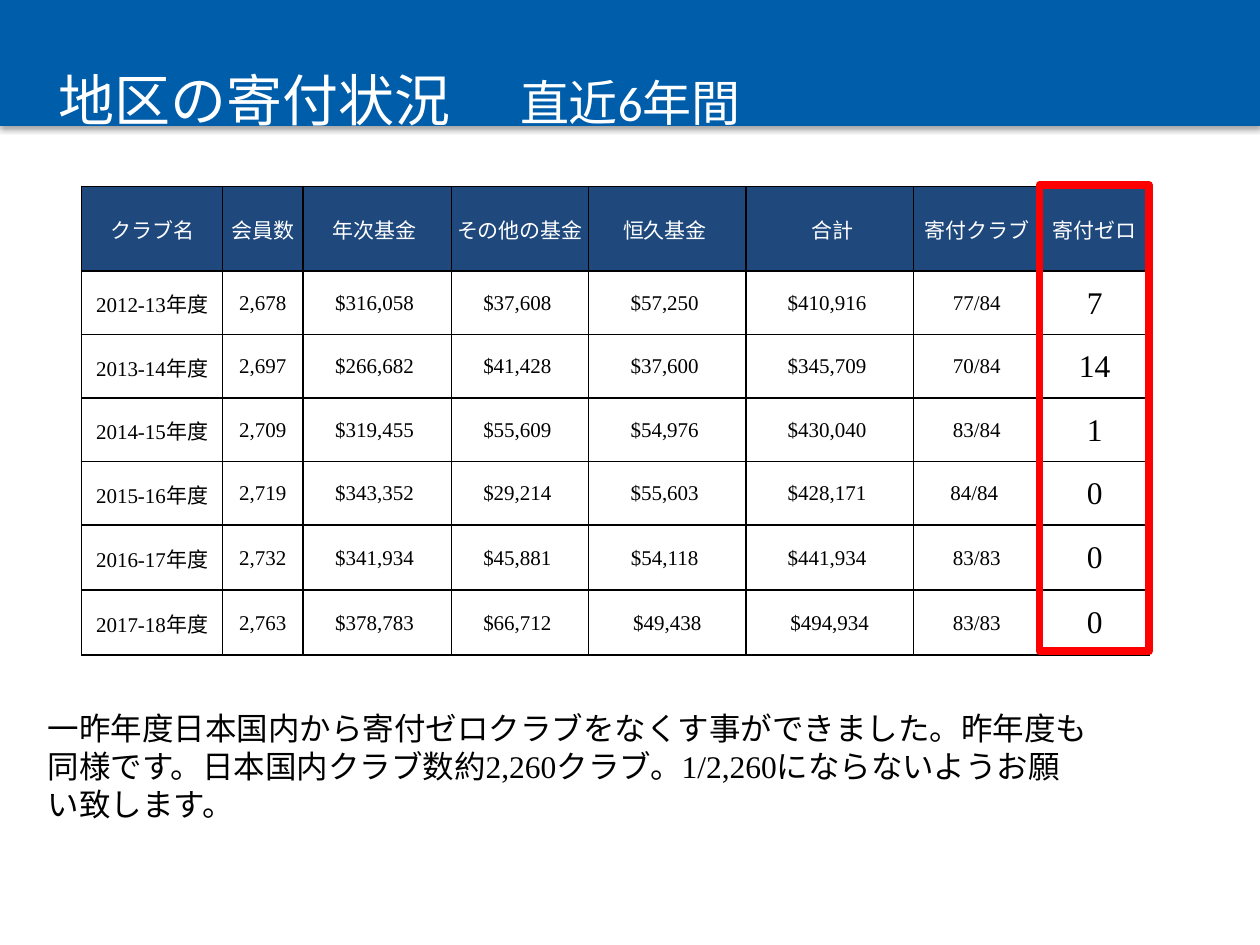
from lxml.etree import SubElement
from pptx import Presentation
from pptx.dml.color import RGBColor
from pptx.enum.shapes import MSO_SHAPE as Shape
from pptx.enum.text import MSO_ANCHOR as Anchor, MSO_AUTO_SIZE as AutoSize, PP_ALIGN as Align
from pptx.oxml import parse_xml
from pptx.oxml.ns import nsdecls, qn
from pptx.util import Pt

COLORS = {"band": "005DAA", "header": "1F497D", "white": "FFFFFF",
          "black": "000000", "highlight": "FF0000"}
TITLE_FONT, BODY_FONT = "Calibri", "Times New Roman"

TITLE = [("地区の寄付状況　 ", 32), ("直近6年間", 28)]
MESSAGE = ("一昨年度日本国内から寄付ゼロクラブをなくす事ができました。昨年度も同様です。"
           "日本国内クラブ数約2,260クラブ。1/2,260にならないようお願い致します。")
DONATIONS = [
    ("クラブ名", "会員数", "年次基金 ", "その他の基金", "恒久基金 ", " 合計", "寄付クラブ", "寄付ゼロ"),
    ("2012-13年度", "2,678", "$316,058 ", "$37,608 ", "$57,250 ", "$410,916 ", "77/84", "7"),
    ("2013-14年度", "2,697", "$266,682 ", "$41,428 ", "$37,600 ", "$345,709 ", "70/84", "14"),
    ("2014-15年度", "2,709", "$319,455 ", "$55,609 ", "$54,976 ", "$430,040 ", "83/84", "1"),
    ("2015-16年度", "2,719", "$343,352 ", "$29,214 ", "$55,603 ", "$428,171 ", "84/84 ", "0"),
    ("2016-17年度", "2,732", "$341,934 ", "$45,881 ", "$54,118 ", "$441,934 ", "83/83", "0"),
    ("2017-18年度", "2,763", "$378,783 ", "$66,712 ", "$49,438", "$494,934", "83/83", "0"),
]
COLUMN_WIDTHS = [80.6, 46, 84.8, 78.4, 90, 95.6, 72.6, 62]
ROW_HEIGHTS = [48.4, 36.3, 36.3, 36.3, 36.3, 37.2, 37.2]
TABLE_LEFT, TABLE_TOP = 46.6, 106.5


def rgb(name):
    return RGBColor.from_string(COLORS[name])


def style(run, size, color, font):
    run.font.size, run.font.name = Pt(size), font
    run.font.color.rgb = rgb(color)


def add_rectangle(slide, *box):
    rectangle = slide.shapes.add_shape(Shape.RECTANGLE, *map(Pt, box))
    rectangle.shadow.inherit = False
    return rectangle


def add_text(slide, box, runs, color, font, anchor):
    text_box = slide.shapes.add_textbox(*map(Pt, box))
    frame = text_box.text_frame
    frame.word_wrap, frame.vertical_anchor = True, anchor
    for text, size in runs:
        run = frame.paragraphs[0].add_run()
        run.text = text
        style(run, size, color, font)
    return frame


def add_band(slide):
    band = add_rectangle(slide, 0, 0, 720, 72)
    band.fill.solid()
    band.fill.fore_color.rgb = rgb("band")
    band.line.fill.background()
    effects = band.element.spPr.find(qn("a:effectLst"))
    shadow = SubElement(effects, qn("a:outerShdw"), blurRad=str(Pt(3.1)),
                        dist=str(Pt(1.8)), dir="5400000", rotWithShape="0")
    color = SubElement(shadow, qn("a:srgbClr"), val=COLORS["black"])
    SubElement(color, qn("a:alpha"), val="35000")


def add_borders(cell):
    """Draw all four borders; they must come before the fill in tcPr."""
    properties = cell._tc.get_or_add_tcPr()
    for index, side in enumerate(("lnL", "lnR", "lnT", "lnB")):
        properties.insert(index, parse_xml(
            f'<a:{side} {nsdecls("a")} w="{Pt(1)}"><a:solidFill>'
            f'<a:srgbClr val="{COLORS["black"]}"/></a:solidFill></a:{side}>'))


def add_donation_table(slide):
    table = slide.shapes.add_table(
        len(DONATIONS), len(COLUMN_WIDTHS), Pt(TABLE_LEFT), Pt(TABLE_TOP),
        Pt(sum(COLUMN_WIDTHS)), Pt(sum(ROW_HEIGHTS))).table
    for column, width in zip(table.columns, COLUMN_WIDTHS):
        column.width = Pt(width)
    for row, height in zip(table.rows, ROW_HEIGHTS):
        row.height = Pt(height)
    last_column = len(COLUMN_WIDTHS) - 1
    for r, values in enumerate(DONATIONS):
        for c, value in enumerate(values):
            cell = table.cell(r, c)
            cell.margin_left = cell.margin_right = cell.margin_top = Pt(0.7)
            cell.margin_bottom = 0
            cell.vertical_anchor = Anchor.MIDDLE
            cell.fill.solid()
            cell.fill.fore_color.rgb = rgb("white" if r else "header")
            add_borders(cell)
            cell.text_frame.text = value
            paragraph = cell.text_frame.paragraphs[0]
            paragraph.alignment = Align.CENTER
            style(paragraph.runs[0], 18 if r and c == last_column else 12,
                  "black" if r else "white", BODY_FONT)


def add_zero_highlight(slide):
    left = TABLE_LEFT + sum(COLUMN_WIDTHS[:-1])
    frame = add_rectangle(slide, left - 0.6, TABLE_TOP - 0.7, 62.6, 266.4)
    frame.fill.background()
    frame.line.color.rgb = rgb("highlight")
    frame.line.width = Pt(4.5)
    SubElement(frame.line._get_or_add_ln(), qn("a:round"))


def main():
    presentation = Presentation()
    presentation.slide_width, presentation.slide_height = Pt(720), Pt(540)
    slide = presentation.slides.add_slide(presentation.slide_layouts[6])
    add_band(slide)
    add_text(slide, (26.6, 37.4, 684, 38.2), TITLE, "white", TITLE_FONT, Anchor.MIDDLE)
    message = add_text(slide, (20.2, 401.8, 610, 80), [(MESSAGE, 18)],
                       "black", BODY_FONT, Anchor.TOP)
    message.auto_size = AutoSize.SHAPE_TO_FIT_TEXT
    add_donation_table(slide)
    add_zero_highlight(slide)
    presentation.save("out.pptx")


if __name__ == "__main__":
    main()
